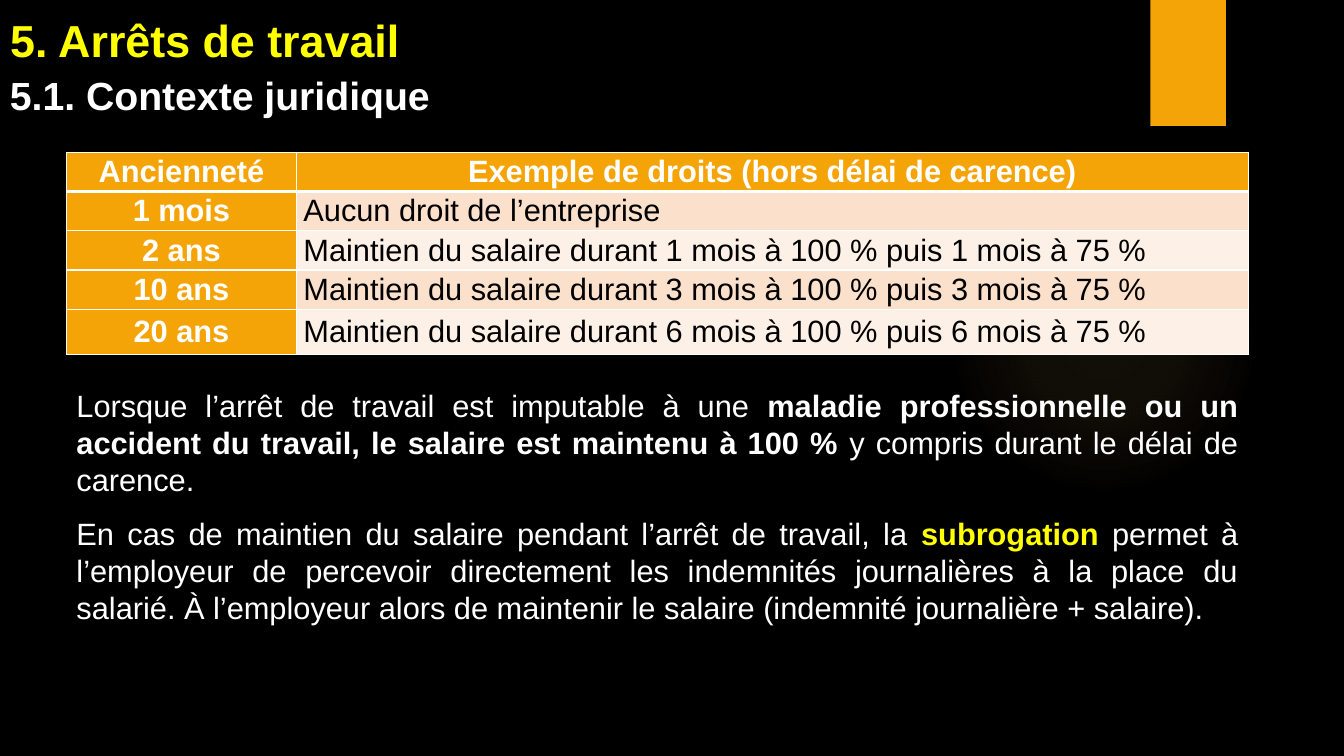
from dataclasses import dataclass

from lxml import etree
from pptx import Presentation
from pptx.dml.color import RGBColor as RGB
from pptx.enum.shapes import MSO_SHAPE as Shape
from pptx.enum.text import MSO_ANCHOR as Anchor, MSO_AUTO_SIZE as AutoSize, PP_ALIGN as Align
from pptx.oxml import parse_xml
from pptx.oxml.ns import nsdecls, qn
from pptx.util import Inches, Pt


@dataclass(frozen=True)
class Theme:
    font: str = "Arial"
    back: str = "000000"
    text: str = "FFFFFF"
    accent: str = "FFFF00"
    orange: str = "F5A408"
    glow: str = "FAC96A"
    bands: tuple = ("FBE0CC", "FDF0E7")
    title: int = 32
    subtitle: int = 28
    body: int = 22


T = Theme()


def style(r, size, color=T.text, bold=False):
    r.font.name, r.font.size, r.font.bold = T.font, Pt(size), bold
    r.font.color.rgb = RGB.from_string(color)


def set_borders(cell, bottom):
    tc_pr = cell._tc.get_or_add_tcPr()
    for i, (side, width) in enumerate((("L", 1), ("R", 1), ("T", 1), ("B", bottom))):
        tc_pr.insert(i, parse_xml(
            f'<a:ln{side} {nsdecls("a")} w="{Pt(width)}"><a:solidFill>'
            f'<a:srgbClr val="{T.text}"/></a:solidFill></a:ln{side}>'))


prs = Presentation()
prs.slide_width, prs.slide_height = Inches(13.33), Inches(7.5)
s = prs.slides.add_slide(prs.slide_layouts[5])
s.background.fill.solid()
s.background.fill.fore_color.rgb = RGB.from_string(T.back)

# Soft glow and orange tab
glow = s.shapes.add_shape(Shape.OVAL, Inches(9.41), Inches(1.83), Inches(3.08), Inches(3.08))
tab = s.shapes.add_shape(Shape.RECTANGLE, Inches(11.41), 0, Inches(0.75), Inches(1.25))
for sp in (glow, tab):
    sp.shadow.inherit = False
    sp.line.fill.background()
tab.fill.solid()
tab.fill.fore_color.rgb = RGB.from_string(T.orange)
glow.fill.gradient()
grad = glow._element.spPr.find(qn("a:gradFill"))
for child in list(grad):
    grad.remove(child)
stops = etree.SubElement(grad, qn("a:gsLst"))
for pos, alpha in ((0, 7), (36, 6), (69, 0)):
    stop = etree.SubElement(stops, qn("a:gs"), pos=str(pos * 1000))
    color = etree.SubElement(stop, qn("a:srgbClr"), val=T.glow)
    etree.SubElement(color, qn("a:alpha"), val=str(alpha * 1000))
circle = etree.SubElement(grad, qn("a:path"), attrib={"path": "circle"})
etree.SubElement(circle, qn("a:fillToRect"), l="50000", t="50000", r="50000", b="50000")

# Title and subtitle
title = s.shapes.title
title.left, title.top, title.width, title.height = 0, 0, Inches(11.23), Inches(0.71)
tf = title.text_frame
tf.text = "5. Arrêts de travail"
tf.auto_size, tf.vertical_anchor = AutoSize.NONE, Anchor.BOTTOM
tf.paragraphs[0].alignment = Align.LEFT
style(tf.paragraphs[0].runs[0], T.title, T.accent, True)

tf = s.shapes.add_textbox(0, Inches(0.66), Inches(4.42), Inches(0.57)).text_frame
tf.text = "5.1. Contexte juridique"
style(tf.paragraphs[0].runs[0], T.subtitle, bold=True)

# Rights by length of service
left, width = Inches(0.66), Inches(11.72)
rows = [("Ancienneté", "Exemple de droits (hors délai de carence)"),
        ("1 mois", "Aucun droit de l’entreprise")]
rows += [(f"{years} ans", f"Maintien du salaire durant {n} mois à 100 % puis {n} mois à 75 %")
         for years, n in ((2, 1), (10, 3), (20, 6))]
table = s.shapes.add_table(len(rows), 2, left, Inches(1.51), width, Inches(2)).table
table.columns[0].width, table.columns[1].width = Inches(2.28), Inches(9.44)
for i, row in enumerate(rows):
    table.rows[i].height = Inches(0.45 if i == len(rows) - 1 else 0.39)
    for j, text in enumerate(row):
        heading = i == 0 or j == 0
        cell = table.cell(i, j)
        cell.text = text
        cell.vertical_anchor = Anchor.MIDDLE
        cell.margin_left = cell.margin_right = Inches(0.07)
        cell.margin_top = cell.margin_bottom = 0
        cell.fill.solid()
        cell.fill.fore_color.rgb = RGB.from_string(T.orange if heading else T.bands[(i - 1) % 2])
        set_borders(cell, 3 if i == 0 else 1)
        p = cell.text_frame.paragraphs[0]
        p.alignment = Align.CENTER if heading else Align.JUSTIFY
        style(p.runs[0], T.body, T.text if heading else T.back, heading)

# Explanations: text, colour, bold
explanations = [
    [("Lorsque l’arrêt de travail est imputable à une ", T.text, False),
     ("maladie professionnelle ou un accident du travail, "
      "le salaire est maintenu à 100 % ", T.text, True),
     ("y compris durant le délai de carence.", T.text, False)],
    [("En cas de maintien du salaire pendant l’arrêt de travail, la ", T.text, False),
     ("subrogation", T.accent, True),
     (" permet à l’employeur de percevoir directement les indemnités journalières à la place "
      "du salarié. À l’employeur alors de maintenir le salaire "
      "(indemnité journalière + salaire).", T.text, False)],
]
tf = s.shapes.add_textbox(left, Inches(3.79), width, Inches(2.49)).text_frame
tf.word_wrap = True
for i, parts in enumerate(explanations):
    p = tf.add_paragraph() if i else tf.paragraphs[0]
    p.alignment = Align.JUSTIFY
    if i:
        p.space_before = Pt(12)
    for text, color, bold in parts:
        r = p.add_run()
        r.text = text
        style(r, T.body, color, bold)

prs.save("out.pptx")
